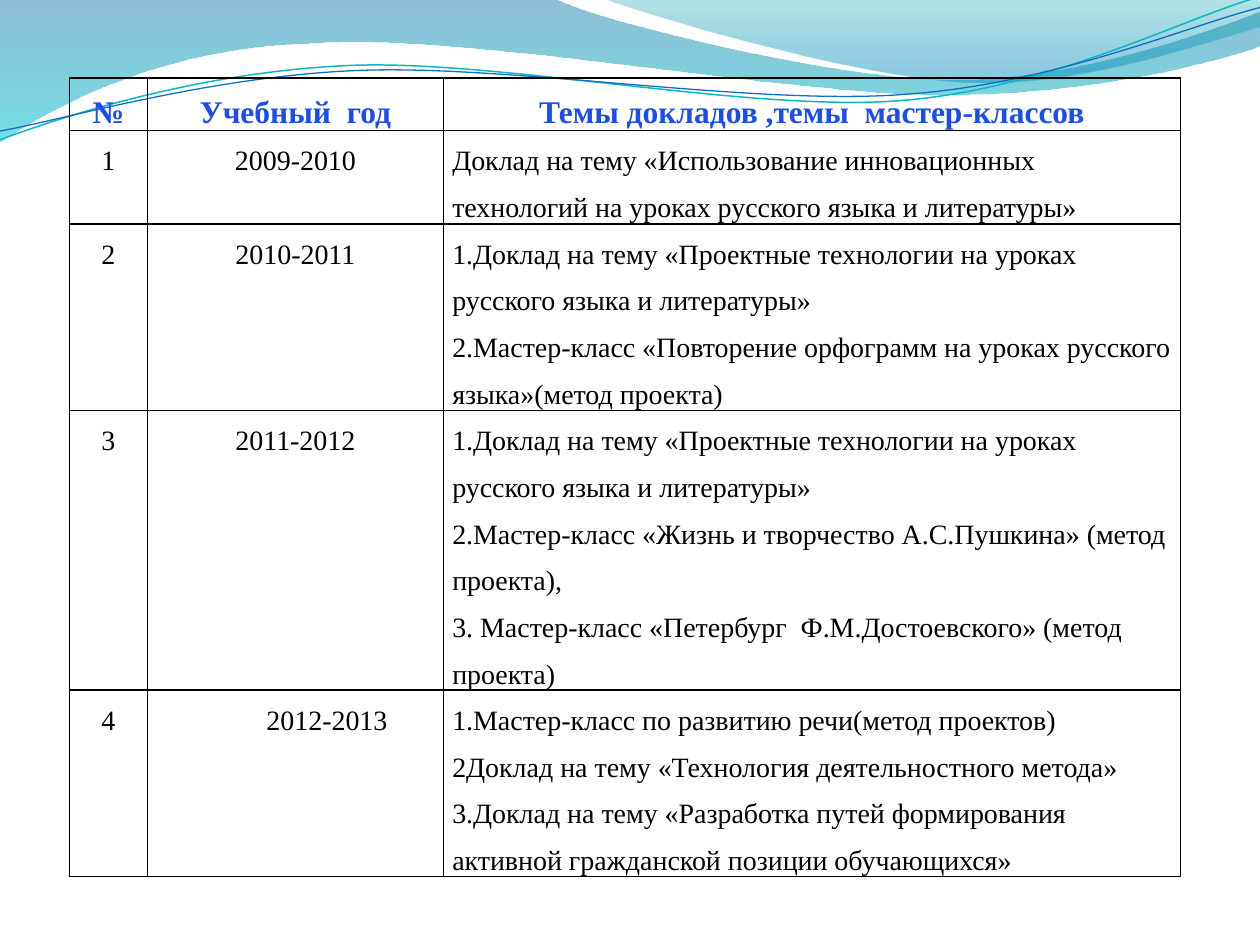
import math

from lxml import etree
from pptx import Presentation
from pptx.dml.color import RGBColor
from pptx.enum import text
from pptx.oxml import ns
from pptx.util import Inches, Pt

COLORS = {"header": "1A4CEE", "body": "000000", "border": "000000",
          "teal_line": "0AB8BF", "blue_line": "0F6FC6"}
FONT = "Times New Roman"

HEADERS = ["№", "Учебный  год", "Темы докладов ,темы  мастер-классов"]
REPORTS = [
    ("2009-2010", ["Доклад на тему «Использование инновационных технологий на уроках русского языка и литературы»"]),
    ("2010-2011", ["1.Доклад на тему «Проектные технологии на уроках русского языка и литературы»",
                   "2.Мастер-класс «Повторение орфограмм на уроках русского языка»(метод проекта)"]),
    ("2011-2012", ["1.Доклад на тему «Проектные технологии на уроках русского языка и литературы»",
                   "2.Мастер-класс «Жизнь и творчество А.С.Пушкина» (метод проекта),",
                   "3. Мастер-класс «Петербург  Ф.М.Достоевского» (метод  проекта)"]),
    ("2012-2013", ["1.Мастер-класс по развитию речи(метод проектов)",
                   "2Доклад на тему «Технология деятельностного метода»",
                   "3.Доклад на тему «Разработка путей формирования активной гражданской позиции обучающихся»"]),
]
COLUMN_WIDTHS = [0.62, 2.35, 5.85]
ROW_HEIGHTS = [0.36, 0.73, 1.45, 2.18, 1.45]

# Waves: a start point, then (x, y) for a straight side or six numbers for a curve.
# Gradient stops are (position, colour, opacity in percent).
WAVES = [
    ([(0, 0), (4.4, -0.01), (4.76, 0.17, 6.64, 0.63, 7.58, 0.63),
      (8.53, 0.63, 9.58, 0.26, 10, 0.09), (10.01, 0.36),
      (9.83, 0.44, 8.7, 0.76, 7.46, 0.75), (6.22, 0.75, 3.82, 0.28, 2.57, 0.34),
      (1.29, 0.36, 0.46, 0.83, -0.01, 1.13)],
     [(0, "0074A1", 45), (1, "00C6CF", 55)]),
    ([(4.79, -0.01), (5.09, 0.11, 6.82, 0.62, 7.69, 0.65),
      (8.56, 0.69, 9.61, 0.32, 10, 0.21), (10, 0)],
     [(0, "00A1A9", 30), (0.8, "008BBF", 45)]),
]
WAVE_LINES = [
    ([(0, 1.11), (0.48, 0.93, 1.58, 0.57, 2.77, 0.52), (3.95, 0.47, 5.93, 0.89, 7.13, 0.8),
      (8.33, 0.71, 9.38, 0.15, 9.98, -0.02)], "teal_line", 0.85),
    ([(0, 1.04), (0.47, 0.96, 1.64, 0.61, 2.83, 0.56), (4.03, 0.51, 5.97, 0.84, 7.17, 0.75),
      (8.36, 0.67, 9.41, 0.21, 10, 0.06)], "blue_line", 0.75),
]
LINE_TILT = -2.7


def turn(x, y, degrees):
    """Turn a point around the slide's top left corner."""
    cos, sin = math.cos(math.radians(degrees)), math.sin(math.radians(degrees))
    return x * cos - y * sin, x * sin + y * cos


def draw_outline(slide, outline, close, tilt=0):
    points = [turn(*side[i:i + 2], -tilt) for side in outline for i in range(0, len(side), 2)]
    corners = [(Inches(x), Inches(y)) for x, y in points]
    builder = slide.shapes.build_freeform(*corners[0])
    builder.add_line_segments(corners[1:], close=close)
    shape = builder.convert_to_shape()
    shape.shadow.inherit = False

    # Join each three points of a curved side into one Bezier segment
    segments = iter(list(shape._element.iter(ns.qn("a:lnTo"))))
    for side in outline[1:]:
        segment = next(segments)
        if len(side) == 6:
            curve = etree.Element(ns.qn("a:cubicBezTo"))
            segment.addprevious(curve)
            for part in (segment, next(segments), next(segments)):
                curve.append(part[0])
                part.getparent().remove(part)

    # Tilt around the shape's middle, which is put back in its place
    middle_x, middle_y = shape.left + shape.width / 2, shape.top + shape.height / 2
    x, y = turn(middle_x, middle_y, tilt)
    shape.left += round(x - middle_x)
    shape.top += round(y - middle_y)
    shape.rotation = tilt
    return shape


def fill_gradient(shape, stops):
    shape.fill.gradient()
    shape.fill.gradient_angle = 270
    for stop, (position, color, _) in zip(shape.fill.gradient_stops, stops):
        stop.position = position
        stop.color.rgb = RGBColor.from_string(color)
    for rgb, (_, _, opacity) in zip(shape._element.spPr.iter(ns.qn("a:srgbClr")), stops):
        etree.SubElement(rgb, ns.qn("a:alpha"), val=str(opacity * 1000))


def write(cell, paragraphs, size=16, color="body", bold=False, align=None, indent=None):
    cell.margin_left = cell.margin_right = Inches(0.07)
    cell.margin_top = cell.margin_bottom = 0
    frame = cell.text_frame
    for number, line in enumerate(paragraphs):
        paragraph = frame.add_paragraph() if number else frame.paragraphs[0]
        paragraph.line_spacing = 1.5
        paragraph.alignment = align
        if indent:
            paragraph.level = 1
            properties = paragraph._p.get_or_add_pPr()
            properties.set("marL", str(Inches(indent[0])))
            properties.set("indent", str(Inches(indent[1])))
        run = paragraph.add_run()
        run.text = line
        run.font.name, run.font.size, run.font.bold = FONT, Pt(size), bold
        run.font.color.rgb = RGBColor.from_string(COLORS[color])


def set_borders(cell):
    cell.fill.background()
    properties = cell._tc.get_or_add_tcPr()
    for place, side in enumerate(("lnL", "lnR", "lnT", "lnB")):
        border = etree.Element(ns.qn("a:" + side), w=str(Pt(1)))
        solid = etree.SubElement(border, ns.qn("a:solidFill"))
        etree.SubElement(solid, ns.qn("a:srgbClr"), val=COLORS["border"])
        properties.insert(place, border)


def main():
    prs = Presentation()
    prs.slide_width, prs.slide_height = Inches(10), Inches(7.5)
    slide = prs.slides.add_slide(prs.slide_layouts[6])

    # Waves along the top
    for outline, stops in WAVES:
        wave = draw_outline(slide, outline, close=True)
        fill_gradient(wave, stops)
        wave.line.fill.background()
    for outline, color, width in WAVE_LINES:
        wave_line = draw_outline(slide, outline, close=False, tilt=LINE_TILT)
        wave_line.fill.background()
        wave_line.line.color.rgb = RGBColor.from_string(COLORS[color])
        wave_line.line.width = Pt(width)

    # Table of reports
    report_frame = slide.shapes.add_table(
        len(ROW_HEIGHTS), len(COLUMN_WIDTHS), Inches(0.55), Inches(0.62),
        Inches(sum(COLUMN_WIDTHS)), Inches(sum(ROW_HEIGHTS)))
    table = report_frame.table
    table.first_row = table.horz_banding = False
    for column, width in zip(table.columns, COLUMN_WIDTHS):
        column.width = Inches(width)
    for row, height in zip(table.rows, ROW_HEIGHTS):
        row.height = Inches(height)
    report_frame.height = Inches(6.85)

    center = text.PP_ALIGN.CENTER
    for column, header in enumerate(HEADERS):
        write(table.cell(0, column), [header], size=18, color="header", bold=True, align=center)
    for number, (year, topics) in enumerate(REPORTS, 1):
        last = number == len(REPORTS)
        write(table.cell(number, 0), [str(number)], align=center)
        write(table.cell(number, 1), [year], align=center, indent=(0.81, -0.31) if last else None)
        write(table.cell(number, 2), topics)
    for cell in table.iter_cells():
        set_borders(cell)

    prs.save("out.pptx")


if __name__ == "__main__":
    main()
